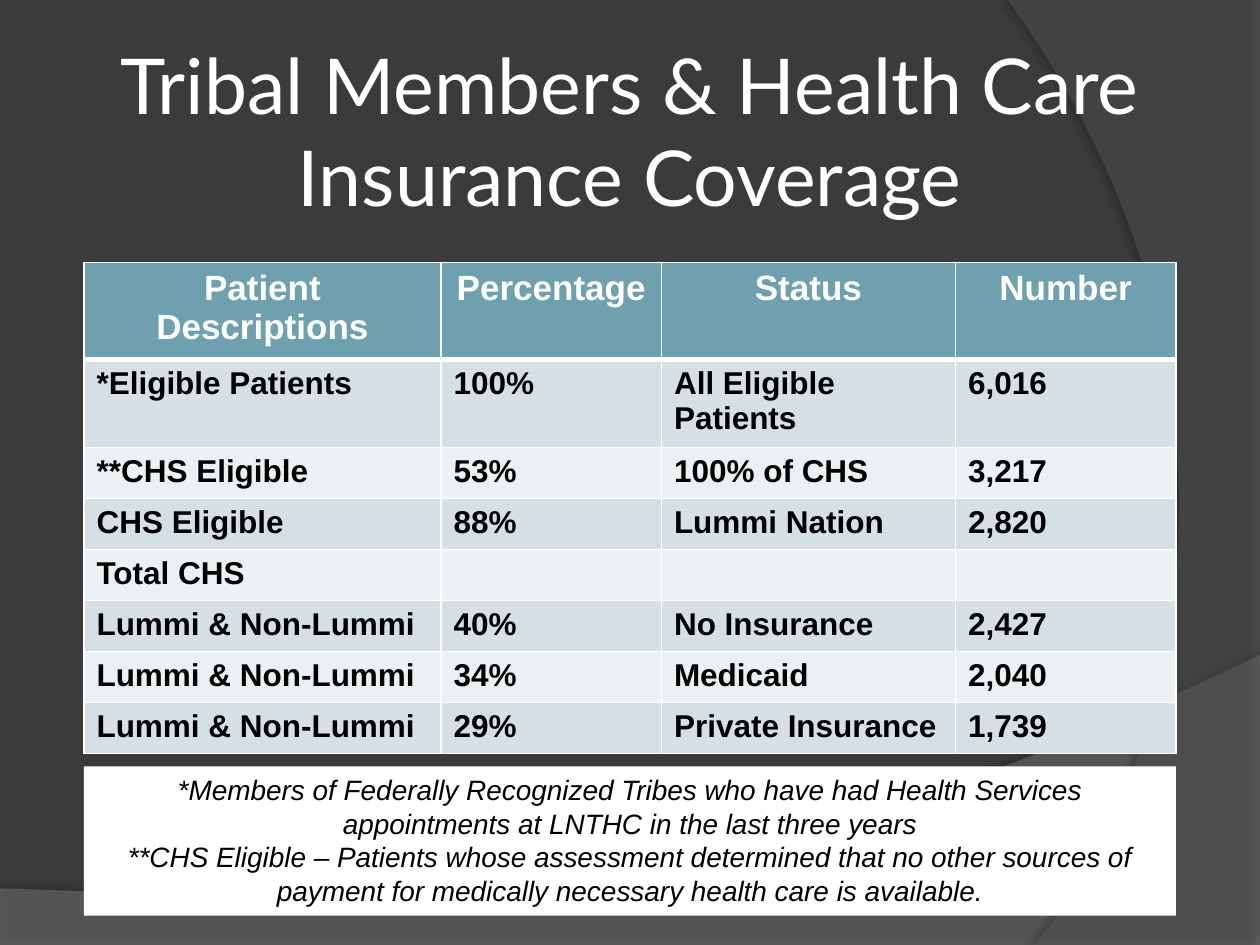
from pptx import Presentation
from pptx.dml.color import RGBColor as RGB
from pptx.enum.shapes import MSO_SHAPE as SHAPE
from pptx.enum.text import MSO_ANCHOR as ANCHOR, MSO_AUTO_SIZE as AUTO, PP_ALIGN as ALIGN
from pptx.oxml import parse_xml
from pptx.oxml.ns import nsdecls
from pptx.util import Inches, Pt

COLORS = {
    "back": "3B3B3B", "wave": "7F7F7F", "arc": "5E5E5E", "white": "FFFFFF",
    "black": "000000", "head": "6EA0B0", "odd": "D5DFE4", "even": "EBF0F2",
}
UNIT = 1 / 12
LEFT, WIDTH = 8, 104
COLUMNS = (34, 21, 28, 21)
ROW = 4.86
ROWS = (
    ("Patient Descriptions", "Percentage", "Status", "Number"),
    ("*Eligible Patients", "100%", "All Eligible Patients", "6,016"),
    ("**CHS Eligible", "53%", "100% of CHS", "3,217"),
    ("CHS Eligible", "88%", "Lummi Nation", "2,820"),
    ("Total CHS", "", "", ""),
    ("Lummi & Non-Lummi", "40%", "No Insurance", "2,427"),
    ("Lummi & Non-Lummi", "34%", "Medicaid", "2,040"),
    ("Lummi & Non-Lummi", "29%", "Private Insurance", "1,739"),
)
NOTES = (
    "*Members of Federally Recognized Tribes who have had Health Services "
    "appointments at LNTHC in the last three years",
    "**CHS Eligible – Patients whose assessment determined that no other "
    "sources of payment for medically necessary health care is available.",
)


def grid(*units):
    return [Inches(u * UNIT) for u in units]


def paint(fill, color):
    fill.solid()
    fill.fore_color.rgb = RGB.from_string(COLORS[color])


def add_run(p, text, size, color, font="Arial", bold=False, italic=False):
    r = p.add_run()
    r.text = text
    r.font.name, r.font.size = font, Pt(size)
    r.font.bold, r.font.italic = bold, italic
    r.font.color.rgb = RGB.from_string(COLORS[color])


def curve(a, b, c, d, steps=40):
    for i in range(steps + 1):
        t = i / steps
        u = 1 - t
        yield tuple(
            u**3 * w + 3 * u * u * t * x + 3 * u * t * t * y + t**3 * z
            for w, x, y, z in zip(a, b, c, d)
        )


def add_swoosh(s, points, color, alpha, shadow_alpha, distance, angle):
    points = [(Inches(x), Inches(y)) for x, y in points]
    builder = s.shapes.build_freeform(*points[0])
    builder.add_line_segments(points[1:], close=True)
    sp = builder.convert_to_shape()
    paint(sp.fill, color)
    sp.line.fill.background()
    srgb = sp.fill._xPr.find(".//{*}srgbClr")
    srgb.append(parse_xml(f'<a:alpha {nsdecls("a")} val="{alpha * 1000}"/>'))
    sp.element.spPr.append(parse_xml(
        f'<a:effectLst {nsdecls("a")}><a:outerShdw blurRad="{Pt(4)}" '
        f'dist="{Pt(distance)}" dir="{angle * 60000}" algn="ctr" rotWithShape="0">'
        f'<a:srgbClr val="{COLORS["black"]}"><a:alpha val="{shadow_alpha * 1000}"/>'
        '</a:srgbClr></a:outerShdw></a:effectLst>'))
    s.shapes.title.element.addprevious(sp.element)


def set_title(s, text):
    sp = s.shapes.title
    sp.left, sp.top, sp.width, sp.height = grid(LEFT, 2.6, WIDTH, 19.5)
    tf = sp.text_frame
    tf.word_wrap, tf.auto_size = True, AUTO.NONE
    tf.vertical_anchor = ANCHOR.MIDDLE
    p = tf.paragraphs[0]
    p.alignment = ALIGN.CENTER
    add_run(p, text, 44, "white", font="Lato")


def add_notes_box(s):
    sp = s.shapes.add_shape(SHAPE.RECTANGLE, *grid(LEFT, 73, WIDTH, 14.2))
    sp.shadow.inherit = False
    paint(sp.fill, "white")
    sp.line.fill.background()
    tf = sp.text_frame
    tf.word_wrap, tf.auto_size = True, AUTO.SHAPE_TO_FIT_TEXT
    tf.vertical_anchor = ANCHOR.TOP
    for i, note in enumerate(NOTES):
        p = tf.add_paragraph() if i else tf.paragraphs[0]
        p.alignment = ALIGN.CENTER
        add_run(p, note, 16, "black", italic=True)


def set_borders(cell, top, bottom):
    tc_pr = cell._tc.get_or_add_tcPr()
    for side, width in (("L", 1), ("R", 1), ("T", top), ("B", bottom)):
        tc_pr.append(parse_xml(
            f'<a:ln{side} {nsdecls("a")} w="{Pt(width)}"><a:solidFill>'
            f'<a:srgbClr val="{COLORS["white"]}"/></a:solidFill></a:ln{side}>'))


def add_coverage_table(s):
    frame = s.shapes.add_table(
        len(ROWS), len(COLUMNS), *grid(LEFT, 25, WIDTH, ROW * len(ROWS)))
    table = frame.table
    table.horz_banding = False
    for column, width in zip(table.columns, grid(*COLUMNS)):
        column.width = width
    for i, texts in enumerate(ROWS):
        table.rows[i].height = grid(ROW)[0]
        for j, text in enumerate(texts):
            cell = table.cell(i, j)
            set_borders(cell, 3 if i == 1 else 1, 1 if i else 3)
            paint(cell.fill, ("odd" if i % 2 else "even") if i else "head")
            p = cell.text_frame.paragraphs[0]
            p.alignment = ALIGN.LEFT if i else ALIGN.CENTER
            if text:
                size, color = (18, "black") if i else (20, "white")
                add_run(p, text, size, color, bold=True)


def main():
    prs = Presentation()
    prs.slide_width, prs.slide_height = Inches(10), Inches(7.5)
    s = prs.slides.add_slide(prs.slide_layouts[5])
    paint(s.background.fill, "back")
    wave = [(0, 7.5), (10, 7.5),
            *curve((10, 5.2), (5.59, 7.29), (3.91, 7.19), (0, 7.05))]
    arc = [(10, 0), (10, 7.5),
           *curve((8.21, 7.5), (9.35, 6.19), (10.18, 3), (8, 0))]
    add_swoosh(s, wave, "wave", 45, 35, 3.5, 270)
    add_swoosh(s, arc, "arc", 40, 45, 4, 180)
    set_title(s, "Tribal Members & Health Care Insurance Coverage")
    add_notes_box(s)
    add_coverage_table(s)
    prs.save("out.pptx")


if __name__ == "__main__":
    main()
